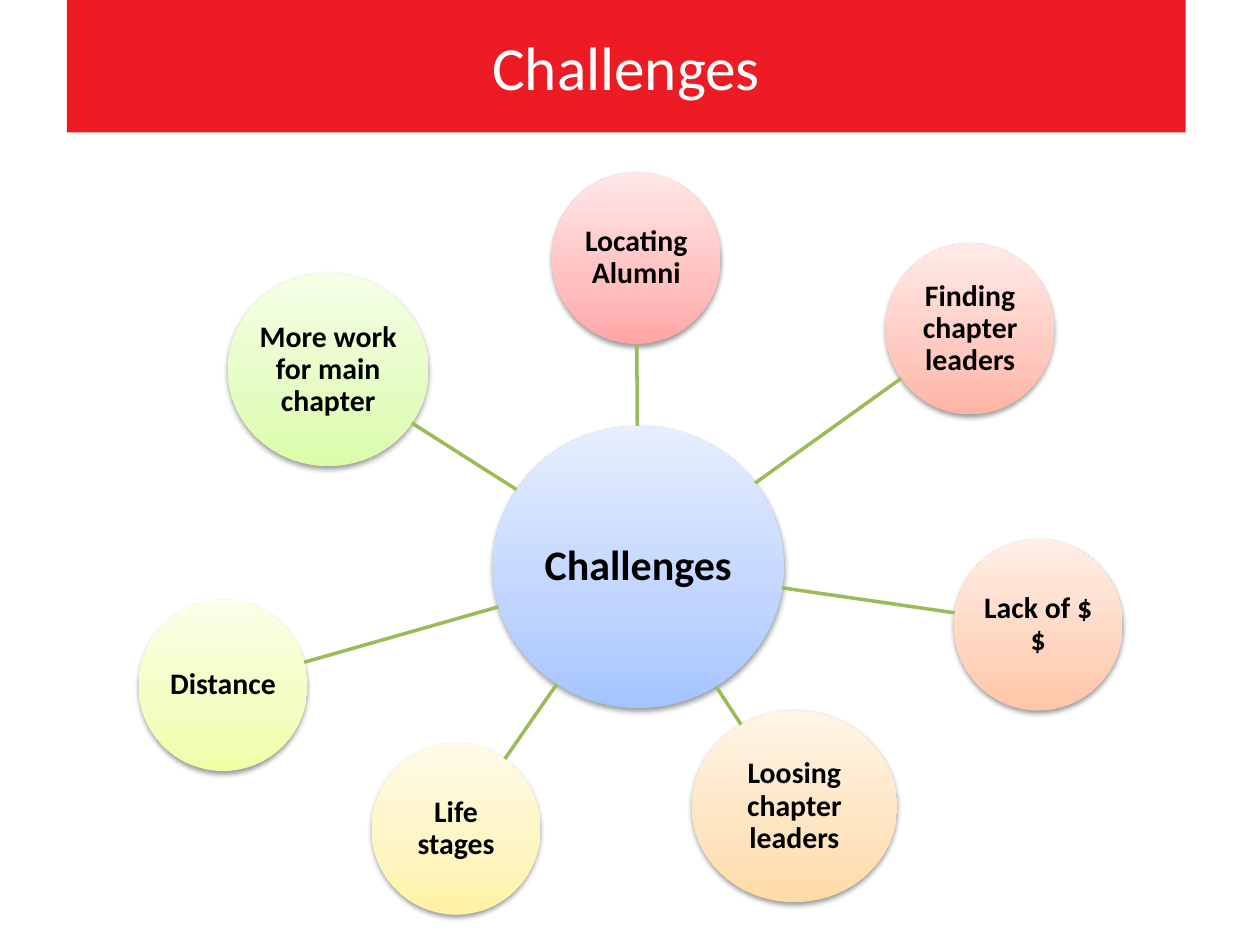
from copy import deepcopy
from math import hypot

from lxml.etree import SubElement
from pptx import Presentation
from pptx.dml.color import RGBColor
from pptx.enum.shapes import MSO_CONNECTOR, MSO_SHAPE
from pptx.enum.text import MSO_ANCHOR, PP_ALIGN
from pptx.oxml.ns import qn
from pptx.util import Inches, Pt

TITLE = "Challenges"
FONT = "Calibri"
COLORS = {"banner": "ED1C24", "white": "FFFFFF", "black": "000000", "spoke": "9BBB59"}
STOPS = (0, 0.35, 1)
HUB = ("Challenges", (3.91, 3.38, 2.31, 2.24), ("A4C4FF", "BFD4FF", "E6EEFF"))
TOPICS = [
    ("Locating Alumni", (4.38, 1.37, 1.34, 1.36), ("FFA6A5", "FFC0BF", "FFE7E7")),
    ("Finding chapter leaders", (7.03, 1.93, 1.34, 1.36), ("FFB3A5", "FFC9BF", "FFEAE7")),
    ("Lack of $$", (7.57, 4.28, 1.34, 1.36), ("FFC5A5", "FFD5BF", "FFEFE7")),
    ("Loosing chapter leaders", (5.49, 5.64, 1.63, 1.52), ("FFDAA5", "FEE4C0", "FFF5E7")),
    ("Life stages", (2.95, 5.9, 1.34, 1.36), ("FFF2A5", "FEF5C0", "FFFBE7")),
    ("Distance", (1.1, 4.76, 1.34, 1.36), ("F1FEA6", "F4FDC1", "FBFFE7")),
    ("More work for main chapter", (1.81, 2.17, 1.59, 1.53), ("DAFDA7", "E4FCC2", "F5FFE7")),
]


def add_block(page, preset, frame, text, size, color, bold=False, inset=0.1):
    shape = page.shapes.add_shape(preset, *map(Inches, frame))
    shape.shadow.inherit = False
    shape.line.fill.background()
    box = shape.text_frame
    box.word_wrap = True
    box.vertical_anchor = MSO_ANCHOR.MIDDLE
    box.margin_left = box.margin_right = Inches(inset)
    box.margin_top = box.margin_bottom = Inches(inset)
    para = box.paragraphs[0]
    para.alignment = PP_ALIGN.CENTER
    span = para.add_run()
    span.text = text
    span.font.name = FONT
    span.font.size = Pt(size)
    span.font.bold = bold
    span.font.color.rgb = RGBColor.from_string(color)
    return shape


def add_circle(page, topic, size, inset):
    text, frame, shades = topic
    circle = add_block(page, MSO_SHAPE.OVAL, frame, text, size, COLORS["black"], True, inset)
    circle.text_frame.paragraphs[0].line_spacing = 0.9
    circle.fill.gradient()
    circle.fill.gradient_angle = 90
    properties = circle._element.spPr
    stop_list = properties.find(".//" + qn("a:gsLst"))
    stop_list.append(deepcopy(stop_list[0]))
    for stop, position, shade in zip(circle.fill.gradient_stops, STOPS, shades):
        stop.position = position
        stop.color.rgb = RGBColor.from_string(shade)
    shadow = SubElement(properties.find(qn("a:effectLst")), qn("a:outerShdw"),
                        blurRad=str(Pt(3.1)), dist=str(Pt(1.6)), dir="5400000", rotWithShape="0")
    tint = SubElement(shadow, qn("a:srgbClr"), val=COLORS["black"])
    SubElement(tint, qn("a:alpha"), val="38000")


def center(frame):
    left, top, width, height = frame
    return left + width / 2, top + height / 2


def edge_toward(frame, target):
    x, y = center(frame)
    dx, dy = target[0] - x, target[1] - y
    reach = 1 / hypot(dx / (frame[2] / 2), dy / (frame[3] / 2))
    return x + dx * reach, y + dy * reach


def add_spoke(page, hub, frame):
    start = edge_toward(hub, center(frame))
    end = edge_toward(frame, center(hub))
    spoke = page.shapes.add_connector(MSO_CONNECTOR.STRAIGHT, *map(Inches, start + end))
    spoke.line.color.rgb = RGBColor.from_string(COLORS["spoke"])
    spoke.line.width = Pt(2)
    SubElement(spoke._element.spPr, qn("a:effectLst"))


def main():
    deck = Presentation()
    deck.slide_width, deck.slide_height = Inches(10), Inches(7.5)
    page = deck.slides.add_slide(deck.slide_layouts[6])

    banner = add_block(page, MSO_SHAPE.RECTANGLE, (0.53, 0, 8.88, 1.05), TITLE, 35, COLORS["white"])
    banner.fill.solid()
    banner.fill.fore_color.rgb = RGBColor.from_string(COLORS["banner"])

    add_circle(page, HUB, 24, 0.02)
    for topic in TOPICS:
        add_circle(page, topic, 17, 0.01)
        add_spoke(page, HUB[1], topic[1])

    deck.save("out.pptx")


if __name__ == "__main__":
    main()
